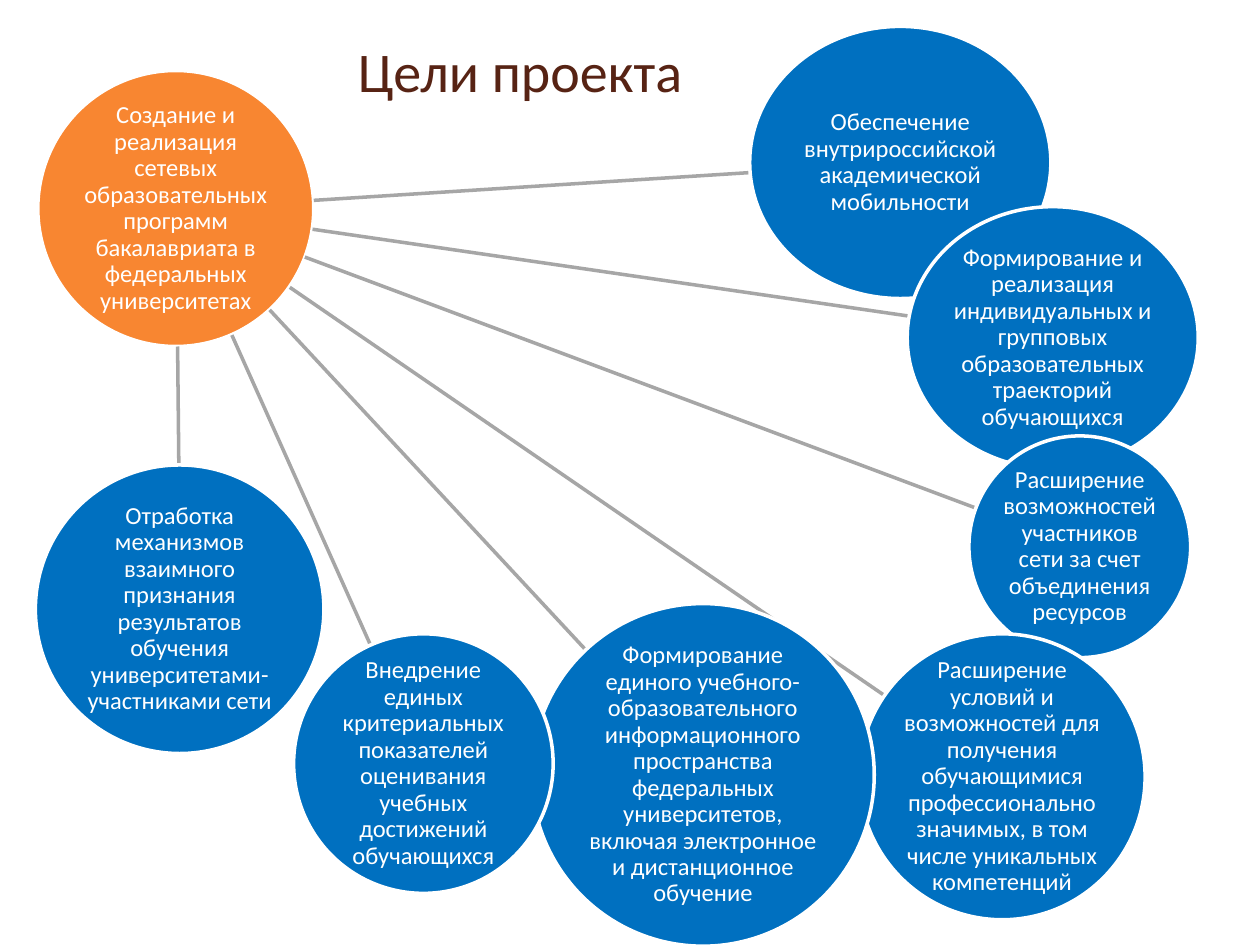
from lxml import etree
from pptx import Presentation
from pptx.dml.color import RGBColor
from pptx.enum.shapes import MSO_CONNECTOR, MSO_SHAPE
from pptx.enum.text import MSO_ANCHOR, PP_ALIGN
from pptx.oxml.ns import qn
from pptx.util import Pt

BROWN = RGBColor(0x57, 0x23, 0x14)
ORANGE = RGBColor(0xF8, 0x86, 0x31)
BLUE = RGBColor(0x00, 0x70, 0xC0)
GRAY = RGBColor(0xA6, 0xA6, 0xA6)
WHITE = RGBColor(0xFF, 0xFF, 0xFF)
FONT = "Calibri"

presentation = Presentation()
presentation.slide_width = Pt(720)
presentation.slide_height = Pt(540)
slide = presentation.slides.add_slide(presentation.slide_layouts[5])


def write(frame, text, size, color, anchor):
    frame.word_wrap = True
    frame.vertical_anchor = anchor
    paragraph = frame.paragraphs[0]
    paragraph.alignment = PP_ALIGN.CENTER
    run = paragraph.add_run()
    run.text = text
    run.font.name = FONT
    run.font.size = Pt(size)
    run.font.color.rgb = color
    return paragraph


def add_circle(text, left, top, width, height, color):
    circle = slide.shapes.add_shape(
        MSO_SHAPE.OVAL, Pt(left), Pt(top), Pt(width), Pt(height))
    circle.shadow.inherit = False
    circle.fill.solid()
    circle.fill.fore_color.rgb = color
    circle.line.color.rgb = WHITE
    circle.line.width = Pt(2)
    frame = circle.text_frame
    frame.margin_left = frame.margin_right = Pt(0.7)
    frame.margin_top = frame.margin_bottom = Pt(0.7)
    paragraph = write(frame, text, 14, WHITE, MSO_ANCHOR.MIDDLE)
    paragraph.line_spacing = 0.9


title = slide.shapes.title
title.left, title.top = Pt(82), Pt(9.4)
title.width, title.height = Pt(430.6), Pt(53.3)
write(title.text_frame, "Цели проекта", 32, BROWN, MSO_ANCHOR.BOTTOM)

add_circle("Создание и реализация сетевых образовательных программ "
           "бакалавриата в федеральных университетах",
           21.6, 40.3, 157.7, 157.7, ORANGE)

goals = [
    ("Обеспечение внутрироссийской академической мобильности",
     (428.4, 15.1, 172.1, 155.5), (179.3, 114.5, 429.1, 98.6)),
    ("Формирование и реализация индивидуальных и групповых "
     "образовательных траекторий обучающихся",
     (518.4, 118.1, 166.3, 149.8), (178.6, 131, 519.8, 180.7)),
    ("Расширение возможностей участников сети за счет объединения ресурсов",
     (553.7, 249.1, 126.7, 126.7), (174.2, 146.9, 557.3, 290.2)),
    ("Расширение условий и возможностей для получения обучающимися "
     "профессионально значимых, в том числе уникальных компетенций",
     (491, 362.2, 163.4, 163.4), (165.6, 164.2, 505.4, 397.4)),
    ("Формирование единого учебного-образовательного информационного "
     "пространства федеральных университетов, включая электронное "
     "и дистанционное обучение",
     (303.8, 344.9, 195.8, 195.8), (154.1, 177.1, 334.8, 371.5)),
    ("Внедрение единых критериальных показателей оценивания учебных "
     "достижений обучающихся",
     (167.8, 362.2, 148.3, 148.3), (132.5, 191.5, 211.7, 368.6)),
    ("Отработка механизмов взаимного признания результатов обучения "
     "университетами-участниками сети",
     (20.2, 265.7, 164.9, 164.9), (101.5, 198, 102.2, 265.7)),
]

for text, box, ends in goals:
    spoke = slide.shapes.add_connector(
        MSO_CONNECTOR.STRAIGHT, *[Pt(value) for value in ends])
    spoke.line.color.rgb = GRAY
    spoke.line.width = Pt(2)
    etree.SubElement(spoke._element.spPr, qn("a:effectLst"))
    add_circle(text, *box, BLUE)

presentation.save("out.pptx")
